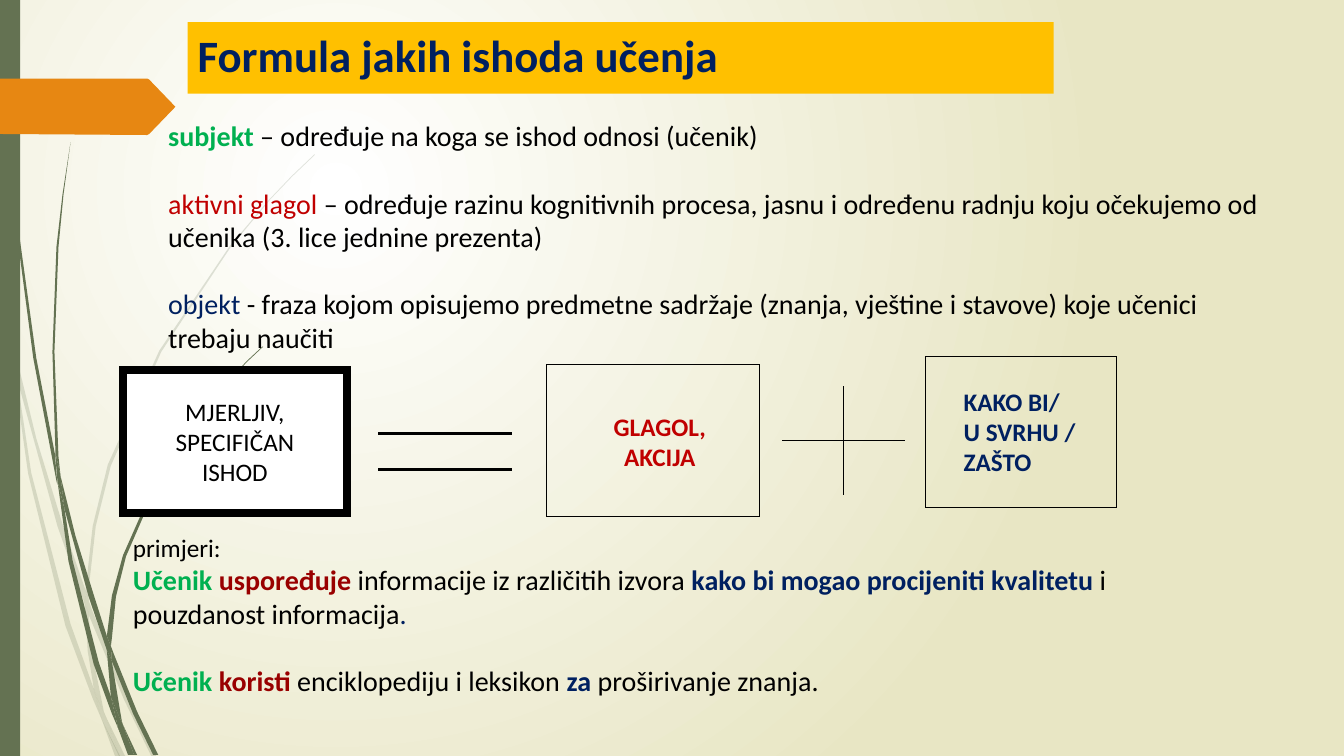
from lxml import etree
from pptx import Presentation
from pptx.dml.color import RGBColor
from pptx.enum.shapes import MSO_CONNECTOR as Connector, MSO_SHAPE as Shape
from pptx.enum.text import MSO_ANCHOR as Anchor, PP_ALIGN as Align
from pptx.oxml.ns import qn
from pptx.util import Inches, Pt

FONT = "Calibri"
BLACK = RGBColor(0x00, 0x00, 0x00)
WHITE = RGBColor(0xFF, 0xFF, 0xFF)
CREAM = RGBColor(0xE8, 0xE6, 0xC4)
OLIVE = RGBColor(0x64, 0x72, 0x52)
ORANGE = RGBColor(0xE7, 0x87, 0x12)
AMBER = RGBColor(0xFF, 0xC0, 0x00)
NAVY = RGBColor(0x00, 0x20, 0x60)
GREEN = RGBColor(0x00, 0xB0, 0x50)
RED = RGBColor(0xC0, 0x00, 0x00)
MAROON = RGBColor(0x99, 0x00, 0x00)

CELL = Inches(1)  # side of one grid square
COLS, ROWS = 13.33, 7.5
STEPS = 100  # outline points snap to hundredths of a square
BLANK_LINE = Pt(24)  # height of one 20 pt line

# Outlines of the grass blades, in grid columns and rows
PALE_BLADES = [
    [(0.11, 3.5), (0.09, 3.22), (0, 2.82), (0, 2.99), (0.1, 3.44)],
    [(0.57, 5.22), (0.84, 5.99), (0.85, 5.86), (0.62, 5.2), (0.36, 4.35),
     (0.14, 3.45), (0.17, 3.76)],
    [(0.92, 6.07), (0.88, 5.96), (0.88, 6.1), (1.23, 6.94), (1.5, 7.5),
     (1.55, 7.5), (1.27, 6.92)],
    [(1.19, 7.5), (1.24, 7.5), (1.05, 7.11)],
    [(0.93, 6.83), (0.7, 6.19), (0.31, 4.69), (0.17, 3.76), (0.11, 3.5),
     (0.28, 4.7), (0.65, 6.21), (0.92, 6.93), (1.01, 7.14), (0.99, 7.07)],
    [(0.84, 5.99), (0.87, 6.46), (0.93, 6.83), (0.96, 6.92), (1.05, 7.11),
     (1.03, 7.06), (0.91, 6.46), (0.88, 6.1), (0.88, 6.08)],
    [(0.88, 5.84), (0.95, 5.22), (1.1, 4.62), (1.6, 3.49), (2.29, 2.45),
     (2.68, 1.98), (2.9, 1.75), (3.12, 1.54), (3.12, 1.53), (2.89, 1.75),
     (2.68, 1.97), (2.28, 2.44), (1.58, 3.48), (1.07, 4.61), (0.92, 5.22),
     (0.85, 5.84), (0.85, 5.86), (0.88, 5.96)],
    [(1.01, 7.14), (1.14, 7.5), (1.19, 7.5)],
    [(0.88, 6.08), (0.88, 6.1), (0.88, 5.96), (0.85, 5.86), (0.84, 5.99)],
    [(0.96, 6.92), (0.93, 6.83), (0.99, 7.07), (1.01, 7.14), (1.18, 7.5),
     (1.19, 7.5), (1.05, 7.11)],
]
DARK_BLADES = [
    [(0.07, 1.1), (0.17, 2.33), (0.33, 3.55), (0.56, 4.77), (0.57, 4.81),
     (0.55, 4.57), (0.55, 4.53), (0.36, 3.55), (0.19, 2.32), (0.08, 1.09),
     (0.05, 0.48), (0.04, 0), (0.03, 0), (0.04, 0.48)],
    [(0.88, 5.92), (1.06, 6.45), (1.06, 6.33), (1.06, 6.31), (0.93, 5.9),
     (0.75, 5.32), (0.6, 4.72), (0.64, 5.05)],
    [(1.13, 6.49), (1.1, 6.41), (1.11, 6.56), (1.32, 7.08), (1.52, 7.49),
     (1.57, 7.49), (1.36, 7.06)],
    [(1.1, 6.91), (0.98, 6.57), (0.72, 5.56), (0.64, 5.05), (0.57, 4.77),
     (0.68, 5.57), (0.93, 6.59), (1.11, 7.08), (1.17, 7.22), (1.16, 7.17)],
    [(0.6, 4.72), (0.58, 4.53), (0.54, 3.49), (0.58, 2.45), (0.63, 1.93),
     (0.7, 1.41), (0.62, 1.93), (0.56, 2.45), (0.52, 3.49), (0.55, 4.49)],
    [(1.33, 7.49), (1.36, 7.49), (1.22, 7.19)],
    [(0.57, 4.77), (0.64, 5.05), (0.6, 4.72), (0.55, 4.49), (0.55, 4.53)],
    [(1.11, 6.33), (1.15, 5.92), (1.25, 5.52), (1.58, 4.76), (2.05, 4.06),
     (2.31, 3.74), (2.45, 3.59), (2.61, 3.44), (2.6, 3.44), (2.45, 3.58),
     (2.31, 3.73), (2.03, 4.05), (1.56, 4.74), (1.22, 5.51), (1.11, 5.91),
     (1.06, 6.31), (1.1, 6.41)],
    [(1.17, 7.22), (1.27, 7.49), (1.31, 7.49)],
    [(1.06, 6.45), (1.1, 6.91), (1.16, 7.06), (1.22, 7.19), (1.21, 7.16),
     (1.11, 6.56), (1.09, 6.51)],
    [(1.06, 6.45), (1.09, 6.51), (1.11, 6.56), (1.1, 6.41), (1.06, 6.31)],
    [(1.16, 7.06), (1.1, 6.91), (1.16, 7.17), (1.17, 7.22), (1.3, 7.49),
     (1.33, 7.49), (1.22, 7.19)],
]
ARROW = [(1.74, 1.06), (1.48, 1.33), (1.46, 1.34), (0, 1.33), (0, 0.78),
         (1.46, 0.78), (1.48, 0.79)]


def grid(*lengths):
    return [int(n * CELL) for n in lengths]


def paint_background(s):
    fill = s.background.fill
    fill.gradient()
    for stop, color in zip(fill.gradient_stops, (WHITE, CREAM)):
        stop.color.rgb = color
    grad = next(s._element.iter(qn("a:gradFill")))
    grad.remove(grad.find(qn("a:lin")))
    circle = etree.SubElement(grad, qn("a:path"), path="circle")
    etree.SubElement(circle, qn("a:fillToRect"),
                     l="50000", t="50000", r="100000", b="100000")


def add_outline(s, points, color, opacity=100):
    snapped = [(round(x * STEPS), round(y * STEPS)) for x, y in points]
    builder = s.shapes.build_freeform(*snapped[0], scale=CELL / STEPS)
    builder.add_line_segments(snapped[1:], close=True)
    sp = builder.convert_to_shape()
    sp.shadow.inherit = False
    sp.fill.solid()
    sp.fill.fore_color.rgb = color
    sp.line.fill.background()
    if opacity < 100:
        clr = next(sp._element.spPr.iter(qn("a:srgbClr")))
        etree.SubElement(clr, qn("a:alpha"), val=str(opacity * 1000))


def add_rect(s, area, fill=None, border=None):
    sp = s.shapes.add_shape(Shape.RECTANGLE, *grid(*area))
    sp.shadow.inherit = False
    if fill is None:
        sp.fill.background()
    else:
        sp.fill.solid()
        sp.fill.fore_color.rgb = fill
    if border is None:
        sp.line.fill.background()
    else:
        sp.line.color.rgb = BLACK
        sp.line.width = Pt(border)
        ln = sp._element.spPr.find(qn("a:ln"))
        etree.SubElement(ln, qn("a:miter"), lim="800000")
    return sp


def add_line(s, ends, width):
    line = s.shapes.add_connector(Connector.STRAIGHT, *grid(*ends))
    line.line.color.rgb = BLACK
    line.line.width = Pt(width)
    etree.SubElement(line._element.spPr, qn("a:effectLst"))


def style(r, size, color, bold=False):
    r.font.name, r.font.size, r.font.bold = FONT, Pt(size), bold
    r.font.color.rgb = color


def write_lines(sp, lines, color, bold=False, align=Align.CENTER):
    tf = sp.text_frame
    tf.word_wrap = False
    tf.text = "\n".join(lines)
    for p in tf.paragraphs:
        p.alignment = align
        style(p.runs[0], 18, color, bold)


def add_text(s, area, paragraphs, indent=0):
    """Each paragraph is (size, space before, [(text, color, bold), ...])."""
    tf = s.shapes.add_textbox(*grid(*area)).text_frame
    tf.word_wrap = True
    for i, (size, before, runs) in enumerate(paragraphs):
        p = tf.add_paragraph() if i else tf.paragraphs[0]
        if indent:
            p._p.get_or_add_pPr().set("marL", str(int(indent * CELL)))
        if before:
            p.space_before = before
        for text, color, bold in runs:
            r = p.add_run()
            r.text = text
            style(r, size, color, bold)


def add_title(s, area, text):
    title = s.shapes.title
    title.left, title.top, title.width, title.height = grid(*area)
    title.fill.solid()
    title.fill.fore_color.rgb = AMBER
    tf = title.text_frame
    tf.text = text
    tf.vertical_anchor = Anchor.TOP
    tf.paragraphs[0].alignment = Align.LEFT
    style(tf.paragraphs[0].runs[0], 32, NAVY, True)


def main():
    prs = Presentation()
    prs.slide_width, prs.slide_height = grid(COLS, ROWS)
    s = prs.slides.add_slide(prs.slide_layouts[5])

    # Backdrop
    paint_background(s)
    for blade in PALE_BLADES:
        add_outline(s, blade, OLIVE, opacity=20)
    for blade in DARK_BLADES:
        add_outline(s, blade, OLIVE)
    add_rect(s, (0, 0, 0.2, ROWS), OLIVE)
    add_outline(s, ARROW, ORANGE)

    add_title(s, (1.86, 0.22, 8.59, 0.71), "Formula jakih ishoda učenja")

    # Formula: outcome = verb + purpose
    outcome = add_rect(s, (1.22, 3.67, 2.22, 1.42), WHITE, 6)
    outcome.text_frame.vertical_anchor = Anchor.MIDDLE
    write_lines(outcome, ["MJERLJIV,", "SPECIFIČAN", "ISHOD"], BLACK)
    for row in (4.3, 4.66):
        add_line(s, (3.75, row, 5.08, row), 2.25)
    add_rect(s, (5.42, 3.62, 2.11, 1.5), border=0.75)
    verb = s.shapes.add_textbox(*grid(5.98, 4.03, 1.13, 0.71))
    write_lines(verb, ["GLAGOL,", "AKCIJA"], RED, True)
    add_line(s, (7.76, 4.37, 8.98, 4.37), 0.75)
    add_line(s, (8.37, 3.83, 8.37, 4.91), 0.75)
    add_rect(s, (9.18, 3.54, 1.89, 1.5), border=0.75)
    purpose = s.shapes.add_textbox(*grid(9.46, 3.78, 1.32, 1.01))
    write_lines(purpose, ["KAKO BI/", "U SVRHU /", "ZAŠTO"], NAVY, True, Align.LEFT)

    # Examples
    add_text(s, (1.22, 5.23, 10.77, 1.75), [
        (18, None, [("primjeri:", BLACK, False)]),
        (20, None, [("Učenik ", GREEN, True), ("uspoređuje ", MAROON, True),
                    ("informacije iz različitih izvora ", BLACK, False),
                    ("kako bi mogao procijeniti kvalitetu ", NAVY, True),
                    ("i pouzdanost informacija", BLACK, False), (".", NAVY, False)]),
        (20, BLANK_LINE, [("Učenik ", GREEN, True), ("koristi", MAROON, True),
                          (" enciklopediju i leksikon ", BLACK, False),
                          ("za", NAVY, True), (" proširivanje znanja.", BLACK, False)]),
    ])

    # Definitions
    add_text(s, (1.07, 1.13, 11.58, 2.46), [
        (20, None, [("subjekt", GREEN, True),
                    (" – određuje na koga se ishod odnosi (učenik)", BLACK, False)]),
        (20, BLANK_LINE, [("aktivni glagol ", RED, False),
                          ("– određuje razinu kognitivnih procesa, jasnu i određenu radnju "
                           "koju očekujemo od učenika (3. lice jednine prezenta)", BLACK, False)]),
        (20, BLANK_LINE, [("objekt ", NAVY, False),
                          ("- fraza kojom opisujemo predmetne sadržaje (znanja, vještine i "
                           "stavove) koje učenici trebaju naučiti", BLACK, False)]),
    ], indent=0.5)

    prs.save("out.pptx")


if __name__ == "__main__":
    main()
